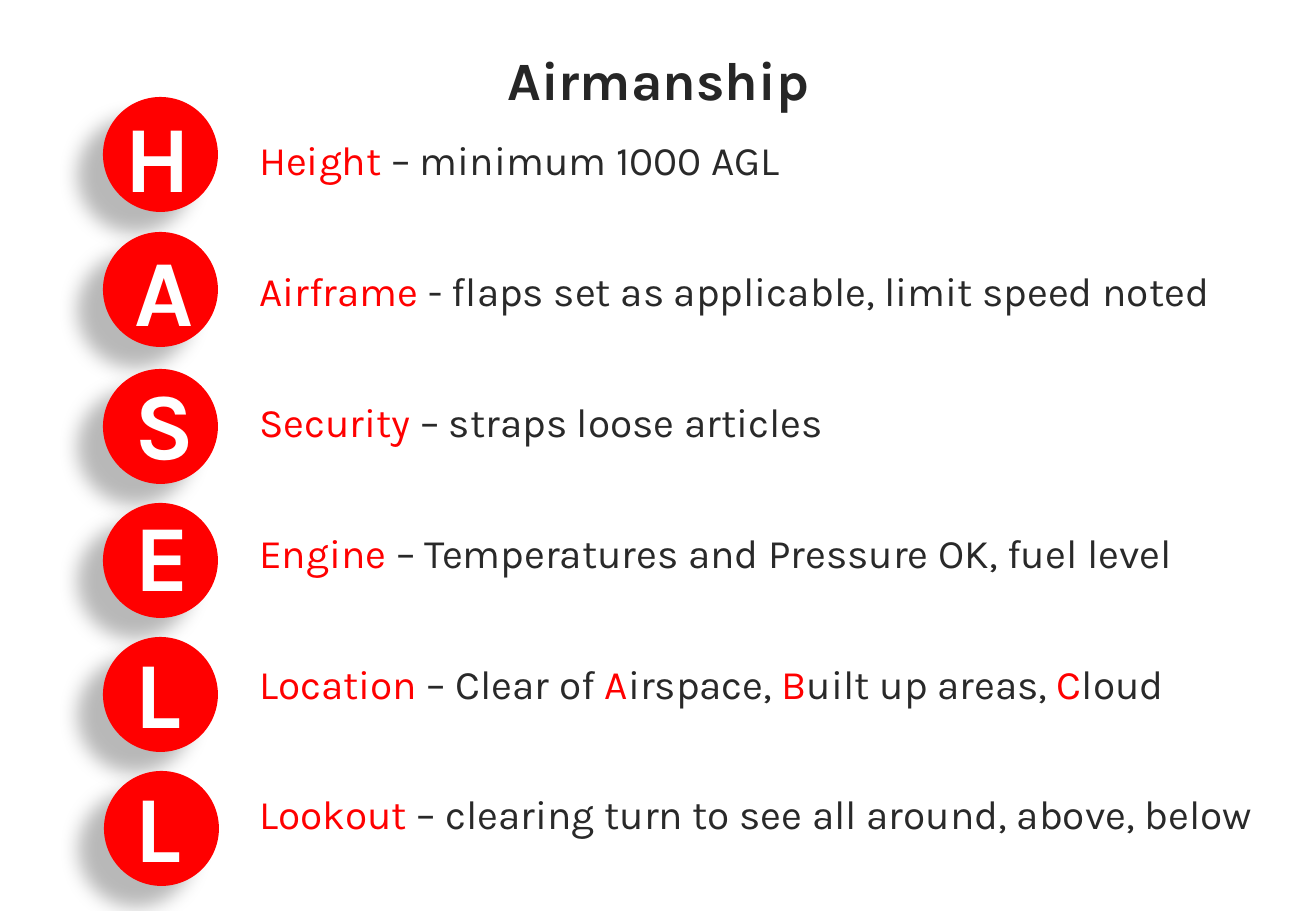
from lxml.etree import SubElement
from pptx import Presentation
from pptx.dml.color import RGBColor
from pptx.enum.shapes import MSO_SHAPE
from pptx.enum.text import MSO_ANCHOR, MSO_AUTO_SIZE, PP_ALIGN
from pptx.oxml import parse_xml
from pptx.oxml.ns import nsdecls, qn
from pptx.util import Pt

PX = 7526  # EMU per px, 121.5 px to the inch
FONT = "Karla"
COLOURS = {"red": "FF0000", "white": "FFFFFF", "title": "262626", "text": "292929"}
DISC_SIZE = 115

# letter, disc left, disc top, letter left, letter top
BADGES = [
    ("H", 103, 97, 113, 92),
    ("A", 103, 232, 123, 226),
    ("S", 103, 369, 123, 359),
    ("E", 103, 503, 123, 491),
    ("L", 103, 637, 123, 628),
    ("L", 104, 771, 123, 762),
]

# spans alternate between red and dark text
CHECKS = [
    ["Height", " – minimum 1000 AGL"],
    ["Airframe", " - flaps set as applicable, limit speed noted"],
    ["Security", " – straps loose articles"],
    ["Engine", " – Temperatures and Pressure OK, fuel level"],
    ["Location", " – Clear of ", "A", "irspace, ", "B", "uilt up areas, ", "C", "loud"],
    ["Lookout", " – clearing turn to see all around, above, below"],
]

SHADOW = f"""<a:effectLst {nsdecls("a")}>
  <a:outerShdw blurRad="150000" dist="250000" dir="8460000" algn="tl" rotWithShape="0">
    <a:srgbClr val="000000"><a:alpha val="28000"/></a:srgbClr>
  </a:outerShdw>
</a:effectLst>"""


def place(shape, left, top, width, height):
    shape.left, shape.top = left * PX, top * PX
    shape.width, shape.height = width * PX, height * PX


def add_span(para, text, size, colour, bold=False):
    span = para.add_run()
    span.text = text
    span.font.name = FONT
    span.font.size = Pt(size)
    span.font.bold = bold
    span.font.color.rgb = RGBColor.from_string(COLOURS[colour])


deck = Presentation()
deck.slide_width, deck.slide_height = 1316 * PX, 911 * PX
page = deck.slides.add_slide(deck.slide_layouts[1])

title = page.shapes.title
place(title, 66, 26, 1185, 105)
title.text_frame.vertical_anchor = MSO_ANCHOR.MIDDLE
title.text_frame.auto_size = MSO_AUTO_SIZE.NONE
heading = title.text_frame.paragraphs[0]
heading.alignment = PP_ALIGN.CENTER
add_span(heading, "Airmanship", 32, "title", bold=True)

checklist = page.placeholders[1]
place(checklist, 247, 120, 1060, 780)
frame = checklist.text_frame
frame.word_wrap = True
frame.auto_size = MSO_AUTO_SIZE.NONE
frame.vertical_anchor = MSO_ANCHOR.TOP
for row, check in enumerate(CHECKS):
    para = frame.add_paragraph() if row else frame.paragraphs[0]
    properties = para._p.get_or_add_pPr()
    properties.set("marL", "0")
    properties.set("indent", "0")
    SubElement(properties, qn("a:buNone"))
    para.alignment = PP_ALIGN.LEFT
    para.line_spacing = Pt(34)
    para.space_before = Pt(43.6 if row else 0)
    for index, text in enumerate(check):
        add_span(para, text, 24, "text" if index % 2 else "red")

for letter, disc_left, disc_top, letter_left, letter_top in BADGES:
    disc = page.shapes.add_shape(MSO_SHAPE.OVAL, 0, 0, 0, 0)
    place(disc, disc_left, disc_top, DISC_SIZE, DISC_SIZE)
    disc.fill.solid()
    disc.fill.fore_color.rgb = RGBColor.from_string(COLOURS["red"])
    disc.line.fill.background()
    disc._element.spPr.append(parse_xml(SHADOW))

for letter, disc_left, disc_top, letter_left, letter_top in BADGES:
    box = page.shapes.add_textbox(0, 0, 0, 0)
    place(box, letter_left, letter_top, 106, 114)
    box.text_frame.word_wrap = True
    add_span(box.text_frame.paragraphs[0], letter, 56, "white", bold=True)

deck.save("out.pptx")
